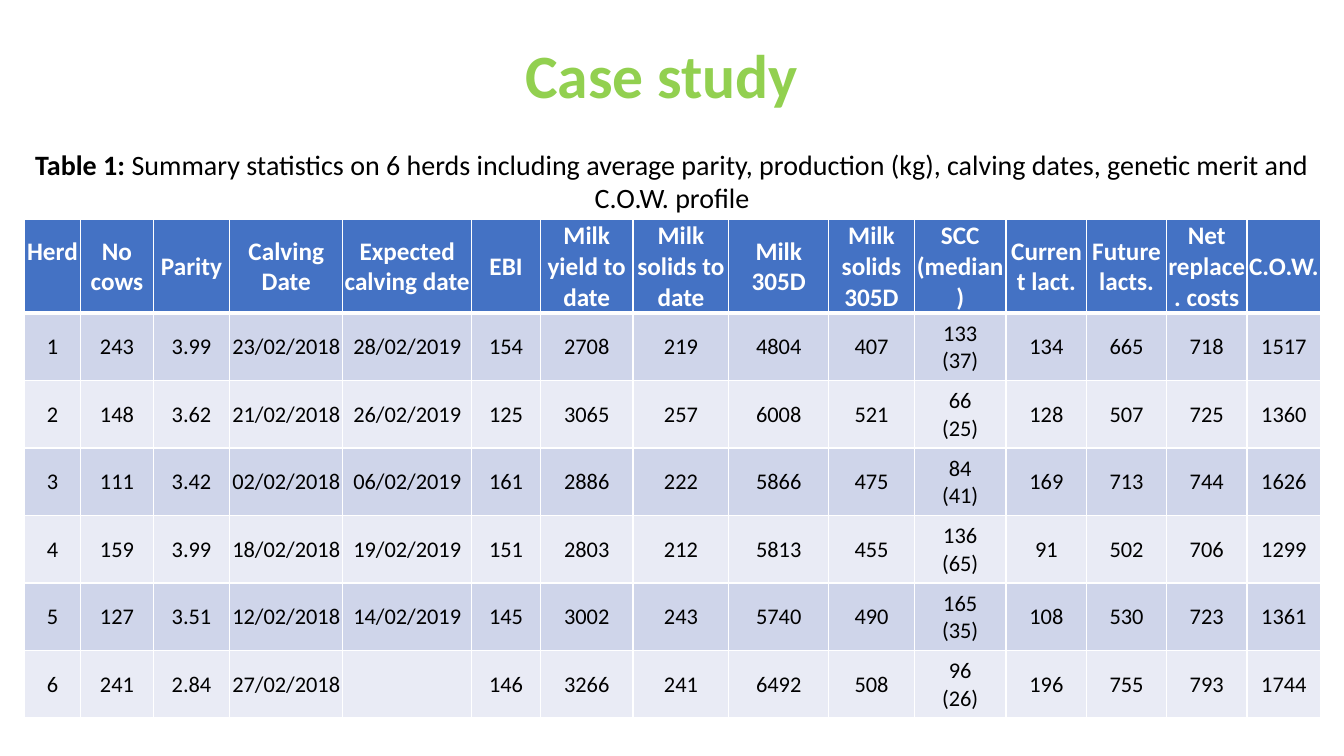
from lxml.etree import SubElement
from pptx import Presentation
from pptx.dml.color import RGBColor
from pptx.enum.text import MSO_ANCHOR, PP_ALIGN
from pptx.oxml.ns import qn
from pptx.util import Pt

PX = 9144
WHITE = RGBColor(0xFF, 0xFF, 0xFF)
BLACK = RGBColor(0x00, 0x00, 0x00)
GREEN = RGBColor(0x92, 0xD0, 0x50)
BLUE = RGBColor(0x44, 0x72, 0xC4)
BAND_DARK = RGBColor(0xCF, 0xD5, 0xEA)
BAND_LIGHT = RGBColor(0xE9, 0xEB, 0xF5)

COLUMN_WIDTHS = [56, 72, 76, 112, 128, 68, 92, 95, 99, 85, 91, 80, 79, 80, 73]
HEADER_HEIGHT = 77
ROW_HEIGHT = 67
ROWS = [
    ["Herd", "No\ncows", "Parity", "Calving\nDate", "Expected\ncalving date", "EBI",
     "Milk yield to date", "Milk solids to date", "Milk 305D", "Milk solids 305D",
     "SCC\n(median)", "Current lact.", "Future lacts.", "Net replace. costs", "C.O.W."],
    ["1", "243", "3.99", "23/02/2018", "28/02/2019", "154", "2708", "219", "4804", "407",
     "133\n(37)", "134", "665", "718", "1517"],
    ["2", "148", "3.62", "21/02/2018", "26/02/2019", "125", "3065", "257", "6008", "521",
     "66\n(25)", "128", "507", "725", "1360"],
    ["3", "111", "3.42", "02/02/2018", "06/02/2019", "161", "2886", "222", "5866", "475",
     "84\n(41)", "169", "713", "744", "1626"],
    ["4", "159", "3.99", "18/02/2018", "19/02/2019", "151", "2803", "212", "5813", "455",
     "136\n(65)", "91", "502", "706", "1299"],
    ["5", "127", "3.51", "12/02/2018", "14/02/2019", "145", "3002", "243", "5740", "490",
     "165\n(35)", "108", "530", "723", "1361"],
    ["6", "241", "2.84", "27/02/2018", "", "146", "3266", "241", "6492", "508",
     "96\n(26)", "196", "755", "793", "1744"],
]


def write_text(frame, text, size, color, bold=False, lead=""):
    frame.word_wrap = True
    for index, line in enumerate(text.split("\n")):
        paragraph = frame.paragraphs[0] if index == 0 else frame.add_paragraph()
        paragraph.alignment = PP_ALIGN.CENTER
        paragraph.font.size = Pt(size)
        pieces = [(lead, True)] if lead and index == 0 else []
        for piece, is_bold in pieces + [(line, bold)]:
            if not piece:
                continue
            run = paragraph.add_run()
            run.text = piece
            run.font.name = "Calibri"
            run.font.size = Pt(size)
            run.font.bold = is_bold
            run.font.color.rgb = color


def add_border(cell, side, width):
    line = SubElement(cell._tc.get_or_add_tcPr(), qn(f"a:ln{side}"), w=str(Pt(width)))
    fill = SubElement(line, qn("a:solidFill"))
    SubElement(fill, qn("a:srgbClr"), val=str(WHITE))


presentation = Presentation()
presentation.slide_width = 1333 * PX
presentation.slide_height = 750 * PX
slide = presentation.slides.add_slide(presentation.slide_layouts[6])

table_height = HEADER_HEIGHT + ROW_HEIGHT * (len(ROWS) - 1)
table = slide.shapes.add_table(
    len(ROWS), len(COLUMN_WIDTHS), 24 * PX, 218 * PX,
    sum(COLUMN_WIDTHS) * PX, table_height * PX).table
for column, width in zip(table.columns, COLUMN_WIDTHS):
    column.width = width * PX

for row_index, values in enumerate(ROWS):
    is_header = row_index == 0
    table.rows[row_index].height = (HEADER_HEIGHT if is_header else ROW_HEIGHT) * PX
    band = BAND_DARK if row_index % 2 else BAND_LIGHT
    for column_index, value in enumerate(values):
        cell = table.cell(row_index, column_index)
        for side in "LRTB":
            thick = (row_index, side) in [(0, "B"), (1, "T")]
            add_border(cell, side, 3 if thick else 1)
        cell.fill.solid()
        cell.fill.fore_color.rgb = BLUE if is_header else band
        cell.vertical_anchor = MSO_ANCHOR.MIDDLE
        cell.margin_left = cell.margin_right = cell.margin_top = 1 * PX
        cell.margin_bottom = 0
        write_text(cell.text_frame, value, size=18 if is_header else 16,
                   color=WHITE if is_header else BLACK, bold=is_header)
table.cell(0, 0).margin_bottom = 30 * PX

caption = slide.shapes.add_textbox(24 * PX, 141 * PX, 1285 * PX, 77 * PX)
write_text(
    caption.text_frame,
    " Summary statistics on 6 herds including average parity, production (kg), "
    "calving dates, genetic merit and C.O.W. profile",
    size=20, color=BLACK, lead="Table 1:")

title = slide.shapes.add_textbox(77 * PX, 28 * PX, 1150 * PX, 145 * PX)
title.text_frame.margin_left = 19 * PX
title.text_frame.margin_top = 9 * PX
write_text(title.text_frame, "Case study", size=44, color=GREEN, bold=True)

presentation.save("out.pptx")
